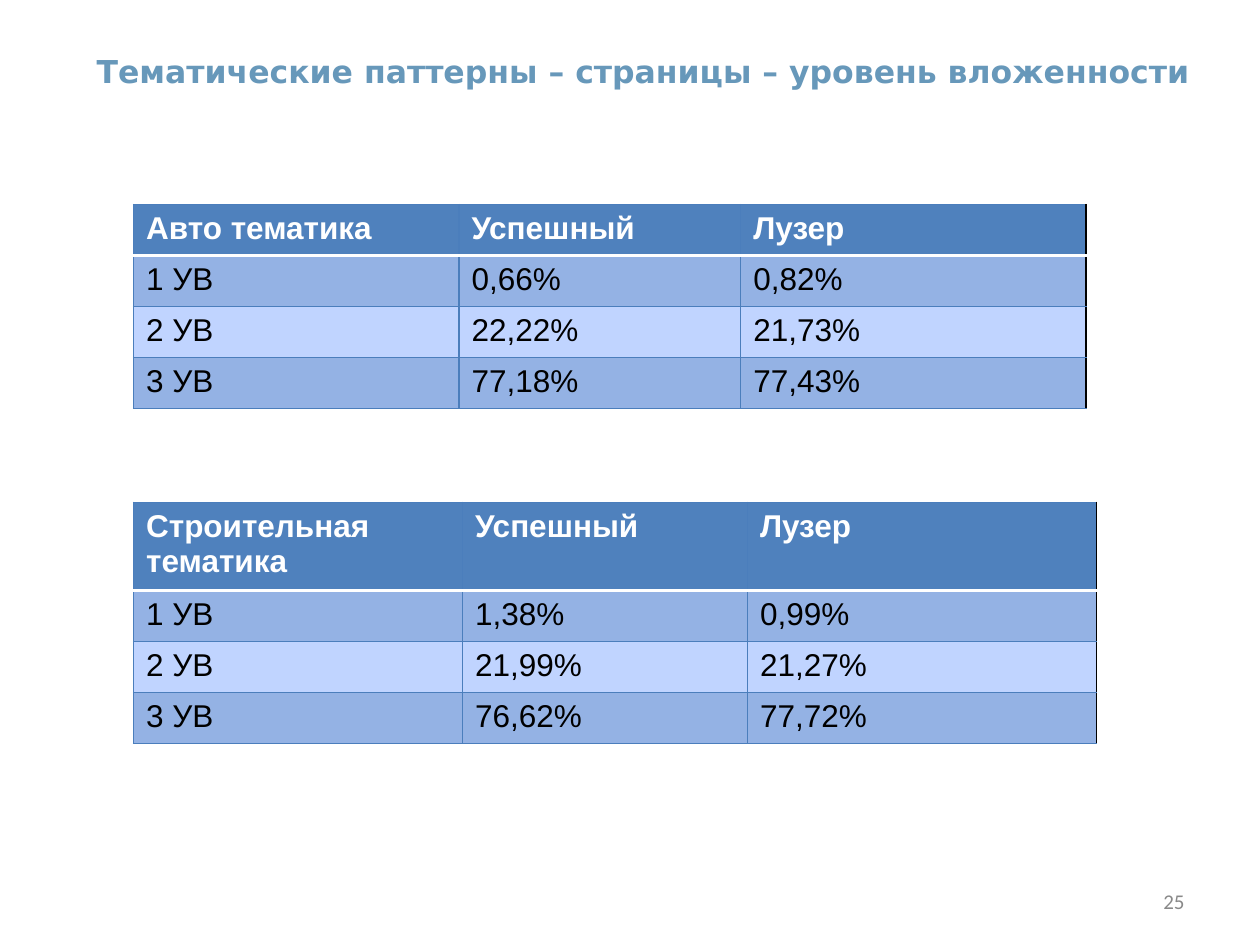
from lxml.etree import SubElement
from pptx import Presentation
from pptx.dml.color import RGBColor as RGB
from pptx.enum.text import MSO_ANCHOR as Anchor, MSO_AUTO_SIZE as Fit, PP_ALIGN as Align
from pptx.oxml.ns import qn
from pptx.util import Pt

COLORS = {
    "title": "6798BA", "page": "898989", "head": "4F81BD", "odd": "94B2E4",
    "even": "C0D4FF", "line": "4B7EBC", "white": "FFFFFF", "black": "000000",
}
ROW = 29.2
HEAD = ("Успешный", "Лузер")
AUTO = [
    ("Авто тематика", *HEAD),
    ("1 УВ", "0,66%", "0,82%"),
    ("2 УВ", "22,22%", "21,73%"),
    ("3 УВ", "77,18%", "77,43%"),
]
BUILD = [
    ("Строительная тематика", *HEAD),
    ("1 УВ", "1,38%", "0,99%"),
    ("2 УВ", "21,99%", "21,27%"),
    ("3 УВ", "76,62%", "77,72%"),
]


def write(frame, text, size=18, font="Arial", color="black", bold=False, align=Align.LEFT):
    para = frame.paragraphs[0]
    para.alignment = align
    run = para.add_run()
    run.text = text
    run.font.size = Pt(size)
    run.font.name = font
    run.font.bold = bold
    run.font.color.rgb = RGB.from_string(COLORS[color])


def edge(cell, **sides):
    props = cell._tc.get_or_add_tcPr()
    for spot, (side, (color, width)) in enumerate(sides.items()):
        line = SubElement(props, qn(f"a:ln{side}"), w=str(Pt(width)))
        fill = SubElement(line, qn("a:solidFill"))
        SubElement(fill, qn("a:srgbClr"), val=COLORS[color])
        props.insert(spot, line)


def add_title(slide, text, left, top, width, height):
    title = slide.shapes.title
    title.left, title.top, title.width, title.height = map(Pt, (left, top, width, height))
    frame = title.text_frame
    frame.word_wrap = False
    frame.auto_size = Fit.SHAPE_TO_FIT_TEXT
    frame.vertical_anchor = Anchor.TOP
    write(frame, text, font="DejaVu Sans", color="title", bold=True)


def add_grid(slide, data, left, top, cols, first):
    high = first + ROW * (len(data) - 1)
    box = map(Pt, (left, top, sum(cols), high))
    table = slide.shapes.add_table(len(data), len(cols), *box).table
    for col, width in zip(table.columns, cols):
        col.width = Pt(width)
    thin, thick, dark = ("line", 0.75), ("white", 2), ("black", 1)
    for r, row in enumerate(data):
        table.rows[r].height = Pt(ROW if r else first)
        for c, text in enumerate(row):
            cell = table.cell(r, c)
            tone = ("odd" if r % 2 else "even") if r else "head"
            cell.fill.solid()
            cell.fill.fore_color.rgb = RGB.from_string(COLORS[tone])
            write(cell.text_frame, text, color="black" if r else "white", bold=r == 0)
            edge(
                cell,
                L=thin,
                R=dark if c == len(cols) - 1 else thin,
                T=thick if r == 1 else thin,
                B=thin if r else thick,
            )


def add_page(slide, text, left, top, width, height):
    frame = slide.shapes.add_textbox(*map(Pt, (left, top, width, height))).text_frame
    frame.word_wrap = True
    frame.vertical_anchor = Anchor.MIDDLE
    write(frame, text, size=12, font="Calibri", color="page", align=Align.RIGHT)


def main():
    deck = Presentation()
    deck.slide_width, deck.slide_height = Pt(720), Pt(540)
    slide = deck.slides.add_slide(deck.slide_layouts[5])
    add_title(slide, "Тематические паттерны – страницы – уровень вложенности", 48, 26, 653, 29)
    add_grid(slide, AUTO, 76.3, 116.8, (186, 161, 197.3), ROW)
    add_grid(slide, BUILD, 76.3, 287, (188, 162.8, 199.5), 50.4)
    add_page(slide, "25", 516, 500.5, 168, 28.8)
    deck.save("out.pptx")


if __name__ == "__main__":
    main()
